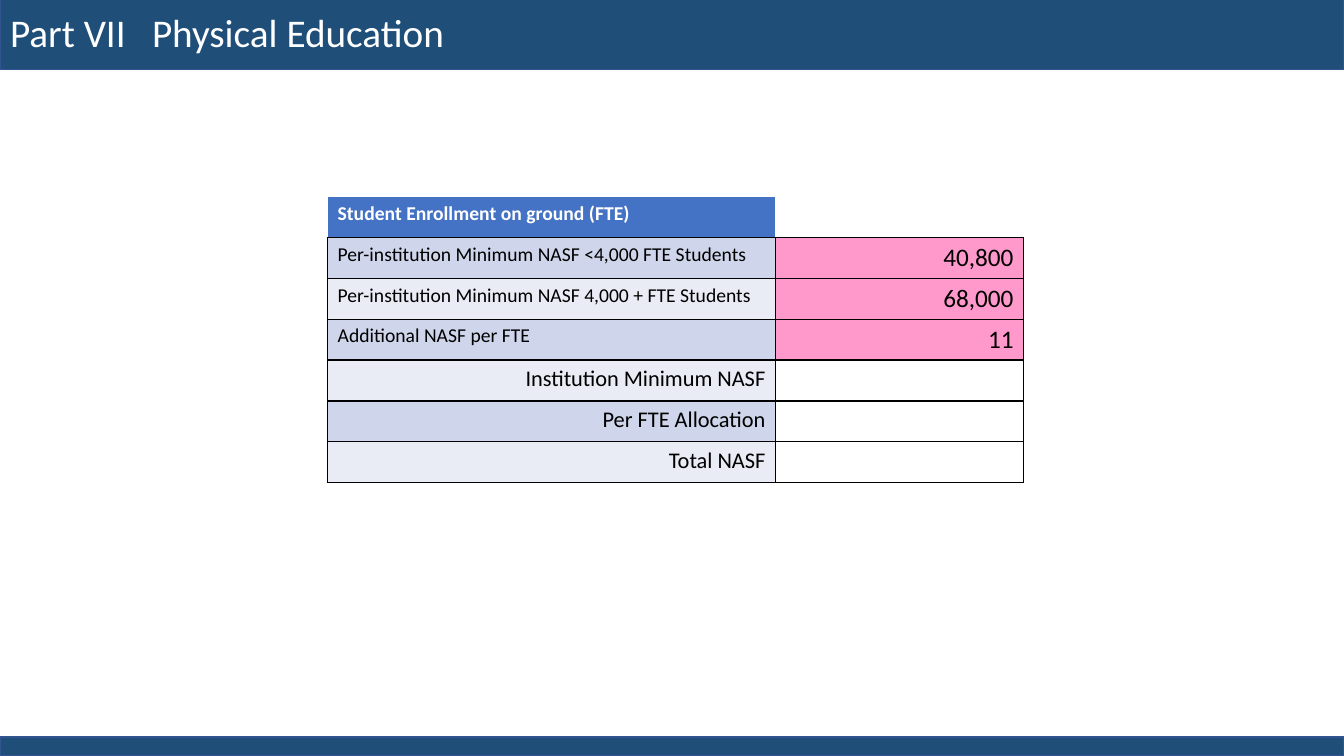
from lxml.etree import SubElement
from pptx import Presentation
from pptx.dml.color import RGBColor
from pptx.enum.shapes import MSO_SHAPE
from pptx.enum.text import MSO_ANCHOR, PP_ALIGN
from pptx.oxml.ns import qn
from pptx.util import Pt

COLORS = {
    "band": "1F4E79",
    "band_edge": "325491",
    "header": "4472C4",
    "stripe_dark": "CFD5EA",
    "stripe_light": "E9EBF5",
    "input": "FF99CC",
    "white": "FFFFFF",
    "black": "000000",
}
FONT = "Calibri"
SLIDE_WIDTH, SLIDE_HEIGHT = 960, 540
HEADING = "Student Enrollment on ground (FTE)"
ALLOWANCES = [
    ("Per-institution Minimum NASF <4,000 FTE Students", "40,800"),
    ("Per-institution Minimum NASF 4,000 + FTE Students", "68,000"),
    ("Additional NASF per FTE", "11"),
]
RESULTS = ["Institution Minimum NASF", "Per FTE Allocation", "Total NASF"]


def color(name):
    return RGBColor.from_string(COLORS[name])


def style_paragraph(paragraph, size, ink, align=PP_ALIGN.LEFT, bold=False):
    paragraph.alignment = align
    font = paragraph.font
    font.name, font.size, font.bold = FONT, Pt(size), bold
    font.color.rgb = color(ink)


def add_band(slide, left, top, width, height):
    band = slide.shapes.add_shape(
        MSO_SHAPE.RECTANGLE, Pt(left), Pt(top), Pt(width), Pt(height))
    band.shadow.inherit = False
    band.fill.solid()
    band.fill.fore_color.rgb = color("band")
    band.line.color.rgb = color("band_edge")
    band.line.width = Pt(1)


def add_title_band(slide, left, top, width, height):
    add_band(slide, left, top, width, height)
    title = slide.shapes.title
    title.element.getparent().append(title.element)
    title.left, title.top = Pt(left), Pt(top + 4.3)
    title.width, title.height = Pt(width), Pt(41.2)
    frame = title.text_frame
    frame.text = "Part VII\tPhysical Education"
    frame.vertical_anchor = MSO_ANCHOR.TOP
    frame.word_wrap = True
    heading = frame.paragraphs[0]
    style_paragraph(heading, 28, "white")
    heading.line_spacing = 1
    heading.space_before = Pt(0)
    properties = heading._p.get_or_add_pPr()
    tabs = properties.makeelement(qn("a:tabLst"), {})
    SubElement(tabs, qn("a:tab"), pos=str(Pt(101.4)), algn="l")
    properties.insert_element_before(tabs, "a:defRPr", "a:extLst")


def set_borders(cell, top_row):
    properties = cell._tc.get_or_add_tcPr()
    for index, side in enumerate(("lnL", "lnR", "lnT", "lnB")):
        ink = "white" if top_row and side != "lnB" else "black"
        border = properties.makeelement(qn(f"a:{side}"), {"w": str(Pt(1))})
        fill = SubElement(border, qn("a:solidFill"))
        SubElement(fill, qn("a:srgbClr"), val=COLORS[ink])
        properties.insert(index, border)


def fill_cell(cell, text, fill, size, ink="black", align=PP_ALIGN.LEFT, bold=False):
    cell.text = text
    style_paragraph(cell.text_frame.paragraphs[0], size, ink, align, bold)
    if fill:
        cell.fill.solid()
        cell.fill.fore_color.rgb = color(fill)
    else:
        cell.fill.background()


def add_enrollment_table(slide, left, top, width, height):
    row_count = 1 + len(ALLOWANCES) + len(RESULTS)
    table = slide.shapes.add_table(
        row_count, 2, Pt(left), Pt(top), Pt(width), Pt(height)).table
    label_width = 320
    table.columns[0].width = Pt(label_width)
    table.columns[1].width = Pt(width - label_width)

    fill_cell(table.cell(0, 0), HEADING, "header", 14, "white", bold=True)
    fill_cell(table.cell(0, 1), "", None, 14)
    entries = ALLOWANCES + [(result, "") for result in RESULTS]
    for row, (label, value) in enumerate(entries, 1):
        stripe = "stripe_dark" if row % 2 else "stripe_light"
        size, align = (14, PP_ALIGN.LEFT) if value else (16, PP_ALIGN.RIGHT)
        fill_cell(table.cell(row, 0), label, stripe, size, align=align)
        fill_cell(table.cell(row, 1), value, "input" if value else None,
                  18 if value else 16, align=PP_ALIGN.RIGHT)
    for row in range(row_count):
        table.rows[row].height = Pt(height / row_count)
        for cell in table.rows[row].cells:
            set_borders(cell, row == 0)


def main():
    presentation = Presentation()
    presentation.slide_width = Pt(SLIDE_WIDTH)
    presentation.slide_height = Pt(SLIDE_HEIGHT)
    slide = presentation.slides.add_slide(presentation.slide_layouts[5])
    add_title_band(slide, 0, -2.2, SLIDE_WIDTH, 52)
    add_band(slide, 0, 526.4, SLIDE_WIDTH, 13.6)
    add_enrollment_table(slide, 234, 140.4, 497.2, 204.4)
    presentation.save("out.pptx")


if __name__ == "__main__":
    main()
